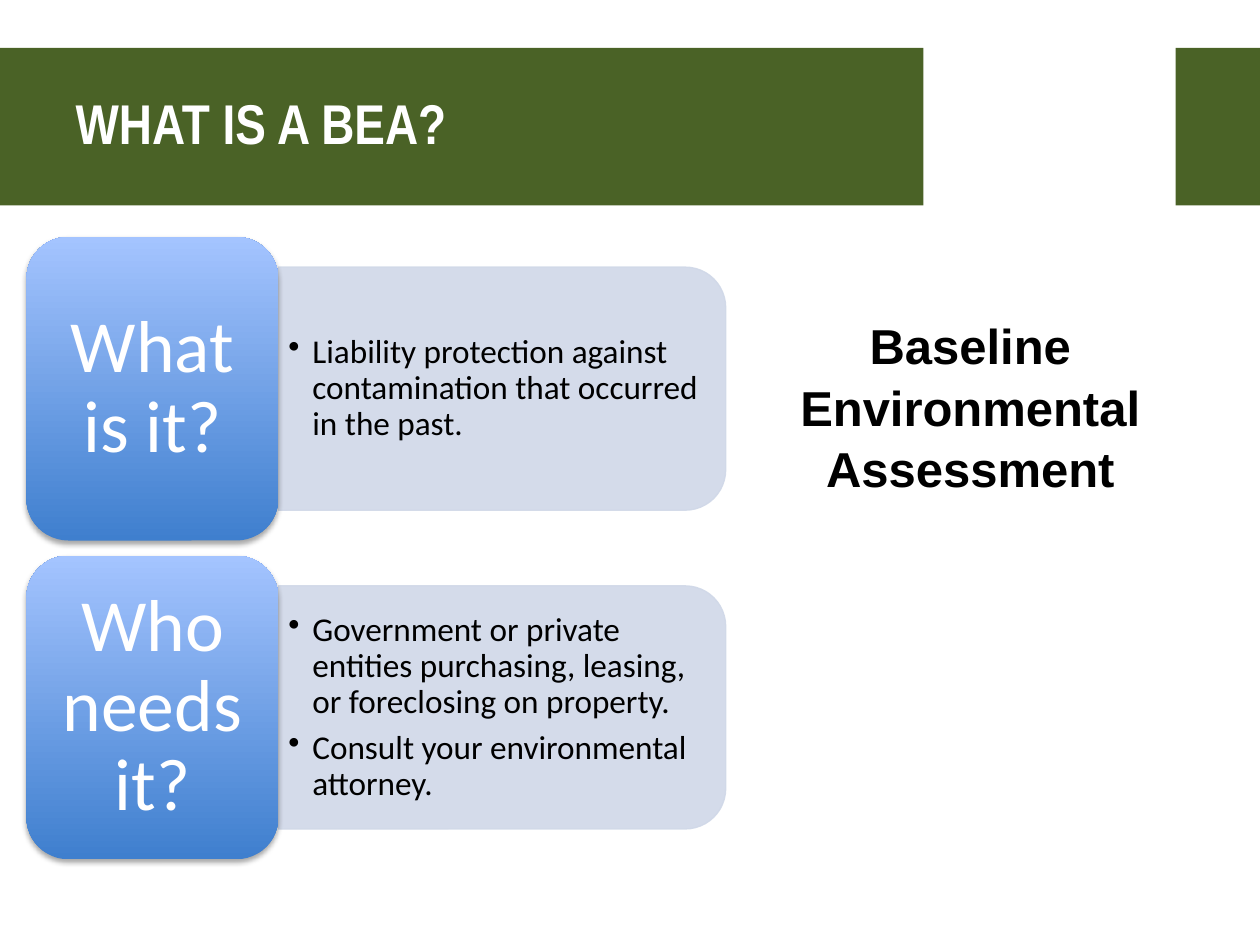
from lxml import etree
from pptx import Presentation
from pptx.dml.color import RGBColor
from pptx.enum.shapes import MSO_SHAPE
from pptx.enum.text import MSO_ANCHOR, MSO_AUTO_SIZE, PP_ALIGN
from pptx.oxml.ns import qn
from pptx.util import Inches, Pt

RECTANGLE = MSO_SHAPE.RECTANGLE
ROUNDED = MSO_SHAPE.ROUNDED_RECTANGLE
TOP_ROUNDED = MSO_SHAPE.ROUND_2_SAME_RECTANGLE
TOP, MIDDLE = MSO_ANCHOR.TOP, MSO_ANCHOR.MIDDLE
LEFT, CENTER = PP_ALIGN.LEFT, PP_ALIGN.CENTER
NO_AUTOFIT = MSO_AUTO_SIZE.NONE

SLIDE_W, SLIDE_H = 10, 7.5
BAND_TOP, BAND_H = 0.38, 1.25
BANDS = [(0, 7.33), (9.33, 0.67)]  # left, width

ROW_TOP, ROW_PITCH = 1.88, 2.53
LABEL_LEFT, LABEL_W, LABEL_H = 0.21, 2, 2.41
PANEL_LEFT, PANEL_W, PANEL_H = LABEL_LEFT + LABEL_W, 3.55, 1.93
LABEL_PAD, PANEL_PAD = 0.1, 0.09
BULLET_INDENT = 0.19

COLORS = {
    "band": "4A6226",
    "panel": "D0D8E8",
    "label_bottom": "3F7FCE",
    "label_top": "A4C4FF",
    "light": "FFFFFF",
    "dark": "000000",
}
TITLE_FONT = {"name": "Arial Narrow", "size": Pt(32), "bold": True}
TERM_FONT = {"name": "Arial", "size": Pt(28), "bold": True}
LABEL_FONT = {"name": "Calibri", "size": Pt(42)}
ANSWER_FONT = {"name": "Calibri", "size": Pt(19)}

QUESTIONS = [
    ("What is it?",
     ["Liability protection against contamination that occurred in the past."]),
    ("Who needs it?",
     ["Government or private entities purchasing, leasing, or foreclosing on property.",
      "Consult your environmental attorney."]),
]


def rgb(name):
    return RGBColor.from_string(COLORS[name])


def inches(*lengths):
    return [Inches(length) for length in lengths]


def set_format(target, values):
    for attribute, value in values.items():
        setattr(target, attribute, value)


def write_paragraph(paragraph, text, font, color, **layout):
    run = paragraph.add_run()
    run.text = text
    set_format(run.font, font)
    run.font.color.rgb = rgb(color)
    set_format(paragraph, layout)


def add_text_frame(slide, box, anchor=TOP, insets=(0.1, 0.05, 0.1, 0.05)):
    frame = slide.shapes.add_textbox(*inches(*box)).text_frame
    left, top, right, bottom = inches(*insets)
    set_format(frame, {
        "word_wrap": True, "vertical_anchor": anchor,
        "margin_left": left, "margin_top": top,
        "margin_right": right, "margin_bottom": bottom,
    })
    return frame


def add_plain_shape(slide, kind, box):
    shape = slide.shapes.add_shape(kind, *inches(*box))
    shape.shadow.inherit = False
    shape.line.fill.background()
    return shape


def set_opacity(fill, percent):
    color = fill._xPr.find(qn("a:solidFill"))[0]
    etree.SubElement(color, qn("a:alpha"), val=str(percent * 1000))


def add_soft_shadow(shape):
    effects = shape.element.spPr.find(qn("a:effectLst"))
    shadow = etree.SubElement(
        effects, qn("a:outerShdw"), blurRad=str(Pt(3.1)), dist=str(Pt(1.8)),
        dir="5400000", rotWithShape="0")
    color = etree.SubElement(shadow, qn("a:srgbClr"), val=COLORS["dark"])
    etree.SubElement(color, qn("a:alpha"), val="35000")


def add_bullet(paragraph):
    indent = Inches(BULLET_INDENT)
    properties = paragraph._p.get_or_add_pPr()
    properties.set("marL", str(indent))
    properties.set("indent", str(-indent))
    etree.SubElement(properties, qn("a:buChar"), char="•")


def add_header(slide, text):
    title = slide.shapes.title
    for left, width in BANDS:
        band = add_plain_shape(slide, RECTANGLE, (left, BAND_TOP, width, BAND_H))
        band.fill.solid()
        band.fill.fore_color.rgb = rgb("band")
        title.element.addprevious(band.element)  # keeps the title in front
    set_format(title, dict(zip(("left", "top", "width", "height"),
                               inches(0.5, 0.42, 6.83, 1.16))))
    set_format(title.text_frame, {
        "word_wrap": True, "auto_size": NO_AUTOFIT, "vertical_anchor": MIDDLE})
    write_paragraph(title.text_frame.paragraphs[0], text, TITLE_FONT, "light",
                    alignment=LEFT, line_spacing=Pt(34))


def add_answer_panel(slide, top, answers):
    panel_top = top + (LABEL_H - PANEL_H) / 2
    # The panel is drawn upright about the same centre, then turned clockwise.
    turn_shift = (PANEL_W - PANEL_H) / 2
    panel = add_plain_shape(slide, TOP_ROUNDED, (
        PANEL_LEFT + turn_shift, panel_top - turn_shift, PANEL_H, PANEL_W))
    panel.rotation = 90
    panel.line.width = Pt(0.75)
    for fill in (panel.fill, panel.line.fill):
        fill.solid()
        fill.fore_color.rgb = rgb("panel")
    set_opacity(panel.fill, 90)
    set_opacity(panel.line.fill, 90)

    frame = add_text_frame(
        slide, (PANEL_LEFT, panel_top + PANEL_PAD,
                PANEL_W - PANEL_PAD, PANEL_H - 2 * PANEL_PAD),
        MIDDLE, (0.08, 0.04, 0.08, 0.04))
    for index, answer in enumerate(answers):
        paragraph = frame.add_paragraph() if index else frame.paragraphs[0]
        add_bullet(paragraph)
        write_paragraph(paragraph, answer, ANSWER_FONT, "dark", level=1,
                        line_spacing=0.9, space_before=Pt(6 if index else 0))


def add_question_label(slide, top, question):
    label = add_plain_shape(slide, ROUNDED, (LABEL_LEFT, top, LABEL_W, LABEL_H))
    label.fill.gradient()
    label.fill.gradient_angle = 90
    for stop, color in zip(label.fill.gradient_stops, ("label_bottom", "label_top")):
        stop.color.rgb = rgb(color)
    add_soft_shadow(label)

    frame = add_text_frame(
        slide, (LABEL_LEFT + LABEL_PAD, top + LABEL_PAD,
                LABEL_W - 2 * LABEL_PAD, LABEL_H - 2 * LABEL_PAD),
        MIDDLE, (0.17, 0.09, 0.17, 0.09))
    write_paragraph(frame.paragraphs[0], question, LABEL_FONT, "light",
                    alignment=CENTER, line_spacing=0.9)


def add_term(slide, text):
    frame = add_text_frame(slide, (5.49, ROW_TOP, 4.42, 4.95),
                           insets=(0.1, 0.6, 0.1, 0.05))
    write_paragraph(frame.paragraphs[0], text, TERM_FONT, "dark",
                    alignment=CENTER, line_spacing=1.05)


def main():
    deck = Presentation()
    deck.slide_width, deck.slide_height = inches(SLIDE_W, SLIDE_H)
    slide = deck.slides.add_slide(deck.slide_layouts.get_by_name("Title Only"))
    add_header(slide, "WHAT IS A BEA?")
    add_term(slide, "Baseline Environmental Assessment")
    for row, (question, answers) in enumerate(QUESTIONS):
        top = ROW_TOP + row * ROW_PITCH
        add_answer_panel(slide, top, answers)
        add_question_label(slide, top, question)
    deck.save("out.pptx")


if __name__ == "__main__":
    main()
